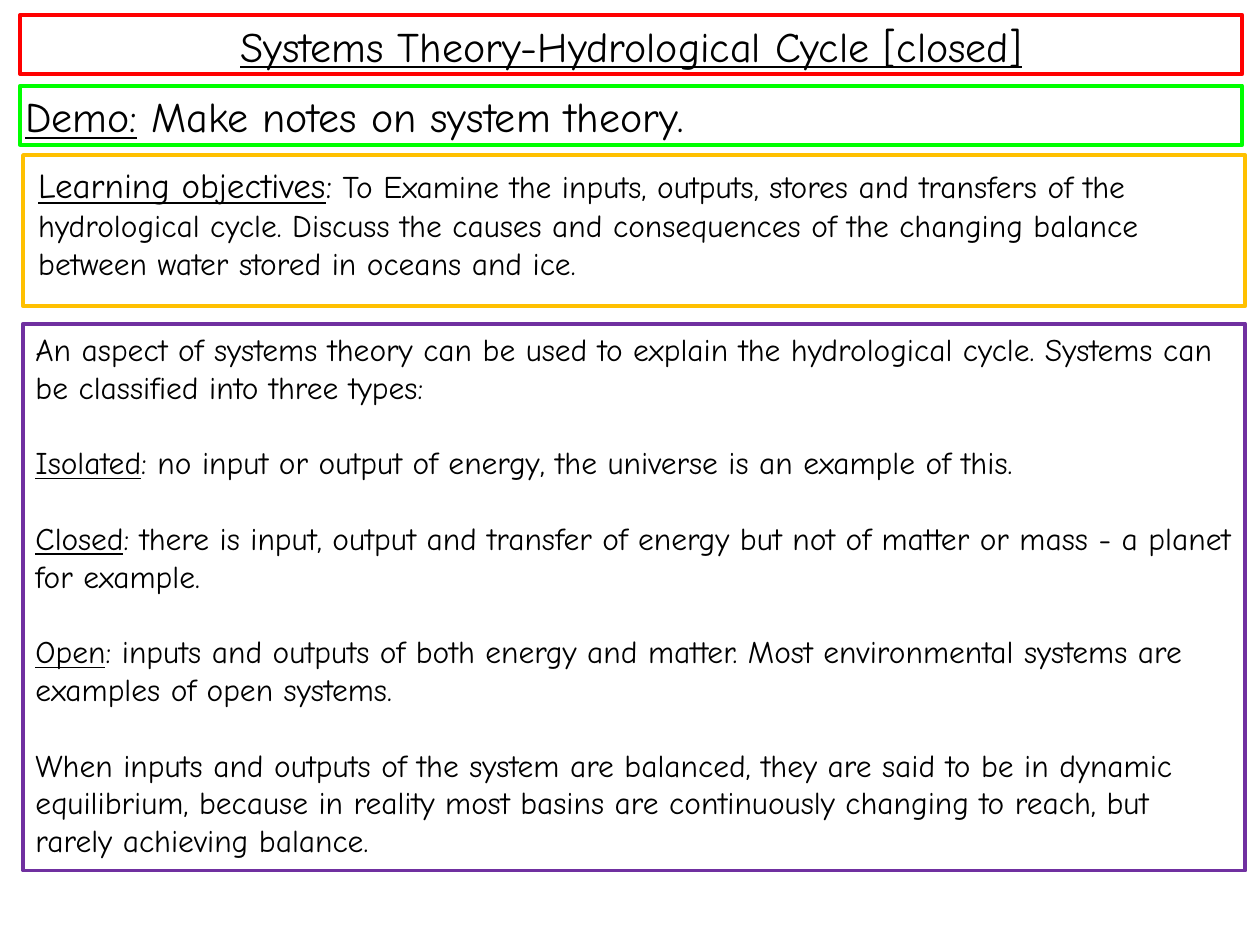
from dataclasses import dataclass

from pptx import Presentation
from pptx.dml.color import RGBColor
from pptx.enum.shapes import MSO_SHAPE
from pptx.enum.text import MSO_ANCHOR, PP_ALIGN
from pptx.util import Pt


@dataclass(frozen=True)
class Theme:
    font: str = "Comic Neue"
    text: RGBColor = RGBColor(0, 0, 0)
    paper: RGBColor = RGBColor(255, 255, 255)
    title: RGBColor = RGBColor(255, 0, 0)
    demo: RGBColor = RGBColor(0, 255, 0)
    objectives: RGBColor = RGBColor(255, 192, 0)
    notes: RGBColor = RGBColor(112, 48, 160)
    heading_size: float = 24
    label_size: float = 20
    body_size: float = 18
    outline: float = 2.25
    paragraph_gap: float = 21.6


THEME = Theme()
LEFT, WIDTH = 11.5, 698.4

SYSTEM_TYPES = [
    ("Isolated", ": no input or output of energy, the universe is an example of this."),
    ("Closed", ": there is input, output and transfer of energy but not of matter or mass"
               " - a planet for example."),
    ("Open", ": inputs and outputs of both energy and matter. Most environmental systems"
             " are examples of open systems."),
]


def add_panel(page, box, colour, insets):
    """Add an outlined rectangle and return its text frame; insets are (side, top)."""
    panel = page.shapes.add_shape(MSO_SHAPE.RECTANGLE, *map(Pt, box))
    panel.shadow.inherit = False
    panel.fill.background()
    panel.line.color.rgb = colour
    panel.line.width = Pt(THEME.outline)
    frame = panel.text_frame
    frame.word_wrap = True
    frame.vertical_anchor = MSO_ANCHOR.TOP
    side, top = map(Pt, insets)
    frame.margin_left = frame.margin_right = side
    frame.margin_top = frame.margin_bottom = top
    return panel, frame


def style_paragraph(para, size, align=PP_ALIGN.LEFT):
    para.alignment = align
    para.font.name = THEME.font
    para.font.size = Pt(size)
    para.font.color.rgb = THEME.text


def add_span(para, text, underline=False):
    span = para.add_run()
    span.text = text
    if underline:
        span.font.underline = True
    return span


def add_heading(page, box, colour, label, text="", align=PP_ALIGN.LEFT):
    """Add a one-line panel with an underlined label and optional plain text."""
    _, frame = add_panel(page, box, colour, (2.88, 2.88))
    para = frame.paragraphs[0]
    style_paragraph(para, THEME.heading_size, align)
    add_span(para, label, underline=True)
    if text:
        add_span(para, text)


def add_objectives(page, box):
    panel, frame = add_panel(page, box, THEME.objectives, (8.64, 5.04))
    panel.fill.solid()
    panel.fill.fore_color.rgb = THEME.paper
    para = frame.paragraphs[0]
    style_paragraph(para, THEME.body_size)
    for span in (add_span(para, "Learning objectives", underline=True), add_span(para, ":")):
        span.font.size = Pt(THEME.label_size)
    add_span(para, " To Examine the inputs, outputs, stores and transfers of the hydrological "
                   "cycle. Discuss the causes and consequences of the changing balance between "
                   "water stored in oceans and ice.")


def add_notes_panel(page, box):
    _, frame = add_panel(page, box, THEME.notes, (7.2, 3.6))
    entries = [
        ("", "An aspect of systems theory can be used to explain the hydrological cycle. "
             "Systems can be classified into three types:"),
        *SYSTEM_TYPES,
        ("", "When inputs and outputs of the system are balanced, they are said to be in "
             "dynamic equilibrium, because in reality most basins are continuously changing "
             "to reach, but rarely achieving balance."),
    ]
    for index, (term, text) in enumerate(entries):
        para = frame.add_paragraph() if index else frame.paragraphs[0]
        style_paragraph(para, THEME.body_size)
        if index:
            para.space_before = Pt(THEME.paragraph_gap)
        if term:
            add_span(para, term, underline=True)
        add_span(para, text)


def main():
    deck = Presentation()
    deck.slide_width, deck.slide_height = Pt(720), Pt(540)
    page = deck.slides.add_slide(deck.slide_layouts[6])
    add_notes_panel(page, (LEFT + 1.7, 185, WIDTH, 312.5))
    add_heading(page, (LEFT, 8.6, WIDTH, 33.8), THEME.title,
                "Systems Theory-Hydrological Cycle [closed]", align=PP_ALIGN.CENTER)
    add_objectives(page, (LEFT + 1.7, 88.6, WIDTH, 86.4))
    add_heading(page, (LEFT, 49, WIDTH, 33.8), THEME.demo,
                "Demo:", " Make notes on system theory.")
    deck.save("out.pptx")


if __name__ == "__main__":
    main()
